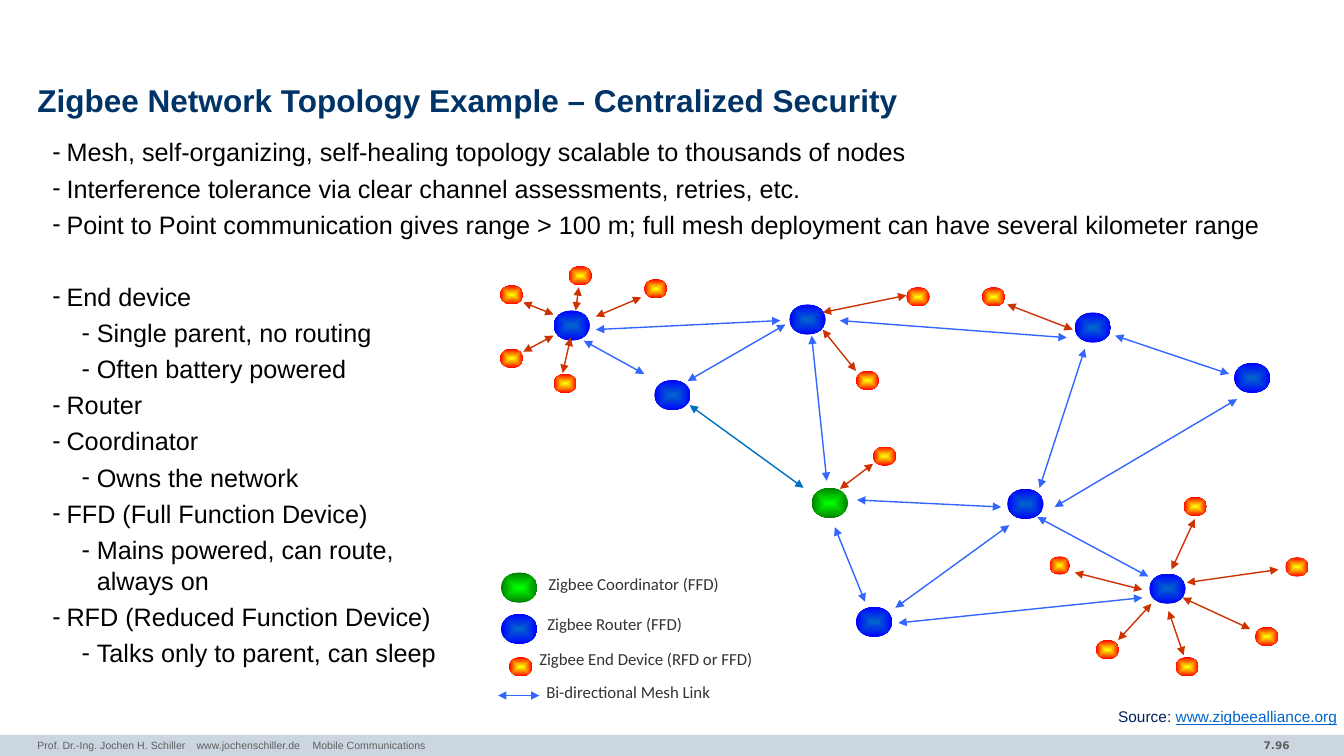
from lxml.etree import SubElement as Sub
from pptx import Presentation
from pptx.dml.color import RGBColor as Rgb
from pptx.enum.shapes import MSO_CONNECTOR as Conn, MSO_SHAPE as Geo
from pptx.enum.text import MSO_ANCHOR as Anchor, MSO_AUTO_SIZE as Fit, PP_ALIGN as Align
from pptx.oxml.ns import qn
from pptx.util import Pt

PX = 9144  # 100 px to the inch
COL = {
    "title": "003366", "text": "000000", "foot": "5F5F5F", "bar": "CCD6E0",
    "label": "333333", "source": "002060", "url": "0066CC",
    "mesh": "3366FF", "star": "CC3300", "join": "0070C0",
}
# kind: width, height, centre colour, edge colour
NODE = {
    "router": (36, 30, "0066CC", "0000FF"),
    "coord": (36, 30, "00FF00", "008000"),
    "end": (23, 19, "FFFF00", "FF0000"),
    "small": (20, 18, "FFFF00", "FF0000"),
}
SPOTS = {
    "router": [(59, 48), (159, 117), (293, 42), (576, 50), (734, 100),
               (509, 225), (359, 342), (650, 309)],
    "coord": [(315, 224)],
    "end": [(6, 23), (6, 86), (59, 111), (74, 4), (149, 17), (409, 25),
            (484, 25), (359, 108), (376, 183), (684, 233), (785, 293),
            (755, 362), (676, 392), (597, 375)],
    "small": [(551, 292)],
}
LINKS = {
    "mesh": [(398, 343, 511, 261), (541, 224, 586, 86), (729, 111, 616, 73),
             (649, 312, 539, 253), (338, 263, 368, 337), (315, 73, 330, 217),
             (289, 62, 192, 118), (89, 78, 149, 111), (360, 236, 503, 243),
             (556, 243, 737, 136), (284, 58, 101, 67), (568, 75, 343, 58),
             (643, 333, 401, 358)],
    "join": [(194, 142, 307, 224)],
    "star": [(619, 375, 652, 339), (684, 390, 669, 346), (750, 364, 683, 333),
             (778, 305, 687, 318), (695, 255, 672, 305), (576, 308, 643, 325),
             (29, 40, 59, 52), (29, 89, 59, 73), (81, 48, 84, 25),
             (101, 54, 146, 35), (68, 110, 76, 75), (409, 33, 326, 50),
             (574, 67, 509, 42), (359, 108, 326, 67), (376, 200, 343, 225)],
}
KEYS = [
    ("coord", 3, 4, "Zigbee Coordinator (FFD)", 40, 0, 212),
    ("router", 3, 45, "Zigbee Router (FFD)", 39, 40, 175),
    ("end", 11, 88, "Zigbee End Device (RFD or FFD)", 31, 75, 279),
]
# level, space before in points, text
GAP = 3.8
LIST = [
    (1, 0, "Mesh, self-organizing, self-healing topology scalable to thousands of nodes"),
    (1, GAP, "Interference tolerance via clear channel assessments, retries, etc."),
    (1, GAP, "Point to Point communication gives range > 100 m; "
             "full mesh deployment can have several kilometer range"),
    (1, 29.5, "End device"),
    (2, GAP, "Single parent, no routing"),
    (2, GAP, "Often battery powered"),
    (1, GAP, "Router"),
    (1, GAP, "Coordinator"),
    (2, GAP, "Owns the network"),
    (1, GAP, "FFD (Full Function Device)"),
    (2, GAP, "Mains powered, can route,\valways on"),
    (1, GAP, "RFD (Reduced Function Device)"),
    (2, GAP, "Talks only to parent, can sleep"),
]


def px(*nums):
    return [round(num * PX) for num in nums]


def style(font, size, col, name="Arial", **more):
    look = {"size": Pt(size), "name": name, **more}
    for key, val in look.items():
        setattr(font, key, val)
    font.color.rgb = Rgb.from_string(COL[col])


def inset(frame, side, end):
    look = {"margin_left": side, "margin_right": side, "margin_top": end, "margin_bottom": end}
    for key, val in look.items():
        setattr(frame, key, val * PX)


def hold(shape, box, anchor):
    """Move a placeholder to a box and fix its text frame."""
    for key, val in zip(("left", "top", "width", "height"), px(*box)):
        setattr(shape, key, val)
    frame = shape.text_frame
    inset(frame, 0, 0)
    look = {"word_wrap": True, "auto_size": Fit.NONE, "vertical_anchor": anchor}
    for key, val in look.items():
        setattr(frame, key, val)
    return frame


def note(slide, box, parts, wrap=False, side=10, align=Align.LEFT):
    """Add a one-line text box; parts are (text, format) pairs."""
    frame = slide.shapes.add_textbox(*px(*box)).text_frame
    frame.word_wrap = wrap
    inset(frame, side, 5)
    para = frame.paragraphs[0]
    para.alignment = align
    for text, look in parts:
        run = para.add_run()
        run.text = text
        style(run.font, **look)
    return para


def node(slide, kind, x, y):
    wide, high, core, rim = NODE[kind]
    dot = slide.shapes.add_shape(Geo.OVAL, *px(x, y, wide, high))
    dot.shadow.inherit = False
    dot.line.fill.background()
    dot.fill.gradient()
    for stop, pos, col in zip(dot.fill.gradient_stops, (0, 1), (core, rim)):
        stop.position = pos
        stop.color.rgb = Rgb.from_string(col)
    grad = dot._element.spPr.find(qn("a:gradFill"))
    grad.remove(grad.find(qn("a:lin")))
    way = Sub(grad, qn("a:path"), {"path": "shape"})
    Sub(way, qn("a:fillToRect"), {side: "50000" for side in "ltrb"})


def link(slide, kind, *ends):
    """Draw a double-headed arrow."""
    wire = slide.shapes.add_connector(Conn.STRAIGHT, *px(*ends))
    wire.line.width = Pt(1)
    wire.line.color.rgb = Rgb.from_string(COL[kind])
    for tag in ("a:headEnd", "a:tailEnd"):
        Sub(wire.line._get_or_add_ln(), qn(tag), {"type": "triangle"})
    Sub(wire._element.spPr, qn("a:effectLst"))


def title(slide, box):
    para = hold(slide.shapes.title, box, Anchor.MIDDLE).paragraphs[0]
    para.alignment, para.line_spacing = Align.LEFT, 0.85
    run = para.add_run()
    run.text = "Zigbee Network Topology Example – Centralized Security"
    style(run.font, 22.5, "title", bold=True)


def body(slide, box):
    frame = hold(slide.placeholders[1], box, Anchor.TOP)
    for num, (level, gap, text) in enumerate(LIST):
        para = frame.add_paragraph() if num else frame.paragraphs[0]
        para.text = text
        props = para._p.get_or_add_pPr()
        left, hang = px(*((29, -14) if level == 1 else (59, -15)))
        props.set("marL", str(left))
        props.set("indent", str(hang))
        Sub(Sub(props, qn("a:buClr")), qn("a:srgbClr"), {"val": COL["text"]})
        Sub(props, qn("a:buChar"), {"char": "-"})
        para.level, para.line_spacing, para.space_before = level, 1.02, Pt(gap)
        for run in para.runs:
            style(run.font, 18, "text")


def mesh(slide, x, y):
    for kind, spots in SPOTS.items():
        for left, top in spots:
            node(slide, kind, x + left, y + top)
    for kind, links in LINKS.items():
        for x1, y1, x2, y2 in links:
            link(slide, kind, x + x1, y + y1, x + x2, y + y2)


def legend(slide, x, y):
    look = {"size": 12, "col": "label", "name": "Calibri"}
    for kind, left, top, text, tx, ty, wide in KEYS:
        node(slide, kind, x + left, y + top)
        note(slide, (x + tx, y + ty, wide, 30), [(text, look)])
    link(slide, "mesh", x, y + 126, x + 41, y + 126)
    note(slide, (x + 38, y + 107, 203, 30), [("Bi-directional Mesh Link", look)])


def source(slide, box):
    note(slide, box, [
        ("Source: ", {"size": 11, "col": "source"}),
        ("www.zigbeealliance.org", {"size": 11, "col": "url", "underline": True}),
    ], side=0)


def footer(slide, x, y, wide, high):
    bar = slide.shapes.add_shape(Geo.RECTANGLE, *px(x, y, wide, high))
    bar.shadow.inherit = False
    bar.fill.solid()
    bar.fill.fore_color.rgb = Rgb.from_string(COL["bar"])
    bar.line.fill.background()
    look = {"size": 7.5, "col": "foot"}
    text = "Prof. Dr.-Ing. Jochen H. Schiller\twww.jochenschiller.de\tMobile Communications"
    para = note(slide, (x + 37, y - 1, 872, 22), [(text, look)], wrap=True, side=0)
    tabs = Sub(para._p.get_or_add_pPr(), qn("a:tabLst"))
    for pos in px(158, 273):
        Sub(tabs, qn("a:tab"), {"pos": str(pos), "algn": "l"})
    page = {**look, "name": "DejaVu Sans", "bold": True}
    note(slide, (x + 1110, y - 1, 179, 23), [("7.96", page)], wrap=True, align=Align.RIGHT)


def main():
    deck = Presentation()
    deck.slide_width, deck.slide_height = px(1333, 750)
    slide = deck.slides.add_slide(deck.slide_layouts[1])
    footer(slide, 0, 729, 1333, 21)
    title(slide, (37, 79, 1260, 47))
    body(slide, (37, 135, 1260, 574))
    source(slide, (1109, 697, 224, 29))
    legend(slide, 494, 564)
    mesh(slide, 490, 260)
    deck.save("out.pptx")


if __name__ == "__main__":
    main()
